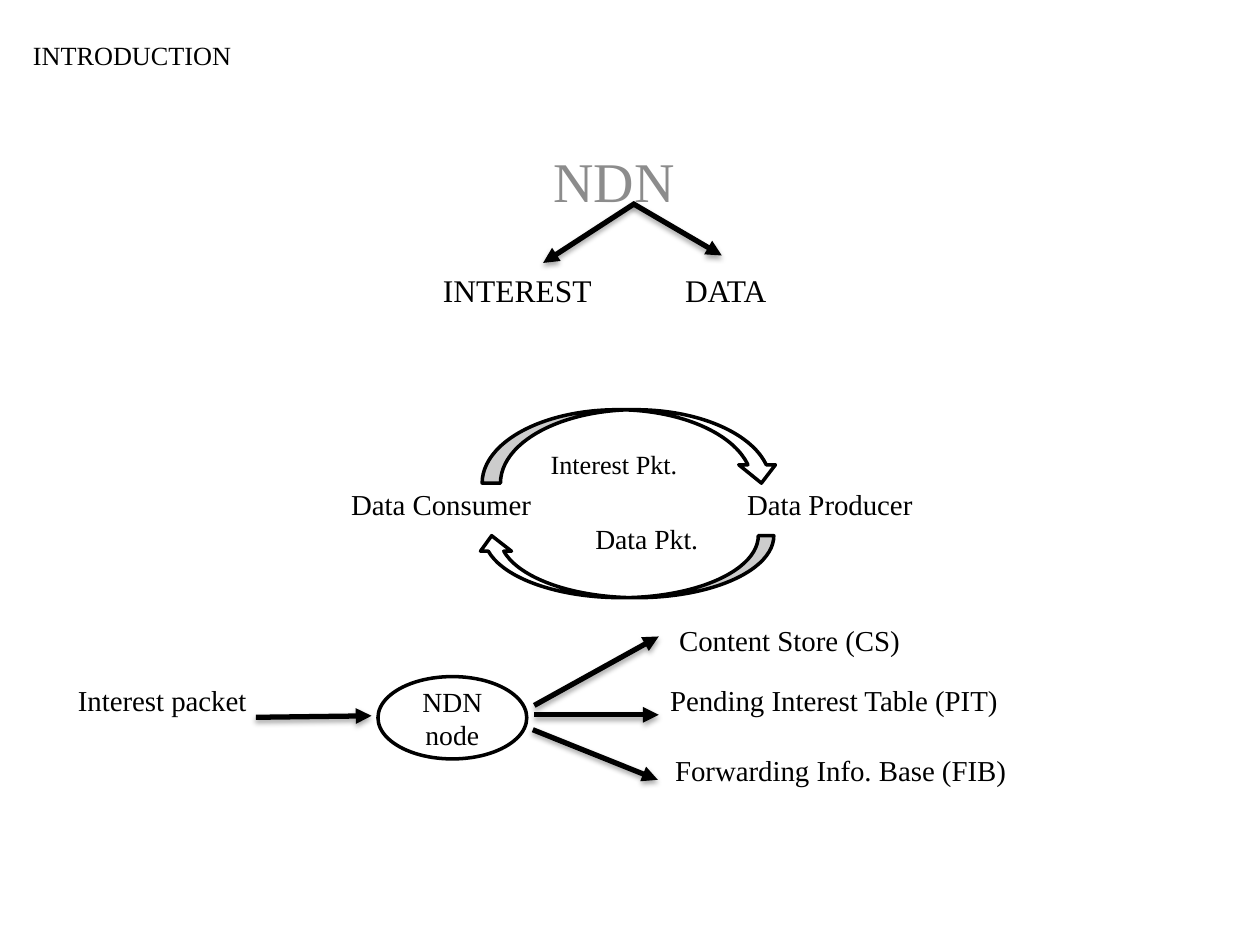
"""Build the NDN introduction slide."""
from dataclasses import dataclass

from lxml import etree
from pptx import Presentation
from pptx import util as u
from pptx.dml.color import RGBColor
from pptx.enum import shapes, text
from pptx.oxml import parse_xml
from pptx.oxml.ns import nsdecls, qn

FONT = "Times New Roman"
COLORS = {"ink": "000000", "grey": "8C8C8C", "paper": "FFFFFF"}
SHADOW = (
    f'<a:effectLst {nsdecls("a")}><a:outerShdw blurRad="39370" dist="22860" dir="5400000" '
    f'rotWithShape="0"><a:srgbClr val="{COLORS["ink"]}"><a:alpha val="35000"/></a:srgbClr>'
    "</a:outerShdw></a:effectLst>"
)


@dataclass
class Label:
    """Text on one line: left edge and vertical centre in cm, size in points."""
    words: str
    x: float
    y: float
    size: float = 16.5
    color: str = "ink"


@dataclass
class Arrow:
    """Straight arrow between two points in cm."""
    x1: float
    y1: float
    x2: float
    y2: float


@dataclass
class Outline:
    """Preset shape with its box in cm."""
    kind: shapes.MSO_SHAPE
    x: float
    y: float
    w: float
    h: float
    words: str = ""
    flip: bool = False


LABELS = [
    Label("NDN", 11.16, 3.63, 32, "grey"),
    Label("INTEREST", 8.93, 5.85, 18),
    Label("DATA", 13.81, 5.85, 18),
    Label("Interest Pkt.", 11.1, 9.36, 15),
    Label("Data Consumer", 7.08, 10.15),
    Label("Data Producer", 15.06, 10.15),
    Label("Data Pkt.", 12, 10.86, 15.8),
    Label("Interest packet", 1.57, 14.1),
    Label("Content Store (CS)", 13.69, 12.89),
    Label("Pending Interest Table (PIT)", 13.51, 14.1),
    Label("Forwarding Info. Base (FIB)", 13.61, 15.51),
]
ARROWS = [
    Arrow(12.8, 4.1, 10.95, 5.3),
    Arrow(12.75, 4.1, 14.55, 5.15),
    Arrow(5.16, 14.46, 7.49, 14.43),
    Arrow(10.77, 14.22, 13.28, 12.83),
    Arrow(10.77, 14.41, 13.28, 14.41),
    Arrow(10.74, 14.71, 13.26, 15.72),
]
OUTLINES = [
    Outline(shapes.MSO_SHAPE.CURVED_DOWN_ARROW, 9.72, 8.26, 6, 1.48),
    Outline(shapes.MSO_SHAPE.CURVED_UP_ARROW, 9.6, 10.8, 6, 1.25, flip=True),
    Outline(shapes.MSO_SHAPE.OVAL, 7.62, 13.64, 3, 1.66, "NDN node"),
]


def rgb(name: str) -> RGBColor:
    """Look up a named colour."""
    return RGBColor.from_string(COLORS[name])


def write(tf, words: str, *, size: float = 16.5, color: str = "ink",
          align=text.PP_ALIGN.LEFT, wrap: bool = True) -> None:
    """Put formatted, vertically centred text in a frame."""
    tf.word_wrap = wrap
    tf.auto_size = text.MSO_AUTO_SIZE.NONE
    tf.vertical_anchor = text.MSO_ANCHOR.MIDDLE
    p = tf.paragraphs[0]
    p.alignment = align
    r = p.add_run()
    r.text = words
    r.font.name, r.font.size = FONT, u.Pt(size)
    r.font.color.rgb = rgb(color)


def draw_label(s, label: Label) -> None:
    """Add a text box without margins around its line."""
    h = label.size * 0.045
    w = len(label.words) * label.size * 0.027
    tf = s.shapes.add_textbox(u.Cm(label.x), u.Cm(label.y - h / 2), u.Cm(w), u.Cm(h)).text_frame
    tf.margin_left = tf.margin_right = tf.margin_top = tf.margin_bottom = 0
    write(tf, label.words, size=label.size, color=label.color, wrap=False)


def draw_arrow(s, a: Arrow) -> None:
    """Add a thick connector with an arrowhead and a soft shadow."""
    sp = s.shapes.add_connector(shapes.MSO_CONNECTOR.STRAIGHT,
                                u.Cm(a.x1), u.Cm(a.y1), u.Cm(a.x2), u.Cm(a.y2))
    sp.line.color.rgb = rgb("ink")
    sp.line.width = u.Pt(3)
    etree.SubElement(sp.line._get_or_add_ln(), qn("a:tailEnd"), type="triangle")
    sp._element.spPr.append(parse_xml(SHADOW))


def draw_outline(s, o: Outline) -> None:
    """Add a white shape with a black line."""
    sp = s.shapes.add_shape(o.kind, u.Cm(o.x), u.Cm(o.y), u.Cm(o.w), u.Cm(o.h))
    sp.shadow.inherit = False
    sp.fill.solid()
    sp.fill.fore_color.rgb = rgb("paper")
    sp.line.color.rgb = rgb("ink")
    sp.line.width = u.Pt(2)
    if o.flip:
        sp._element.spPr.xfrm.set("flipH", "1")
    if o.words:
        write(sp.text_frame, o.words, size=15.8, align=text.PP_ALIGN.CENTER)


def main() -> None:
    """Assemble and save the slide."""
    prs = Presentation()
    prs.slide_width, prs.slide_height = u.Cm(25.4), u.Cm(19.05)
    s = prs.slides.add_slide(prs.slide_layouts[5])
    title = s.shapes.title
    title.left, title.top, title.width, title.height = u.Cm(0.41), u.Cm(0.53), u.Cm(9.12), u.Cm(1.17)
    write(title.text_frame, "INTRODUCTION", size=15)
    for draw, items in ((draw_arrow, ARROWS), (draw_outline, OUTLINES), (draw_label, LABELS)):
        for item in items:
            draw(s, item)
    prs.save("out.pptx")


if __name__ == "__main__":
    main()
